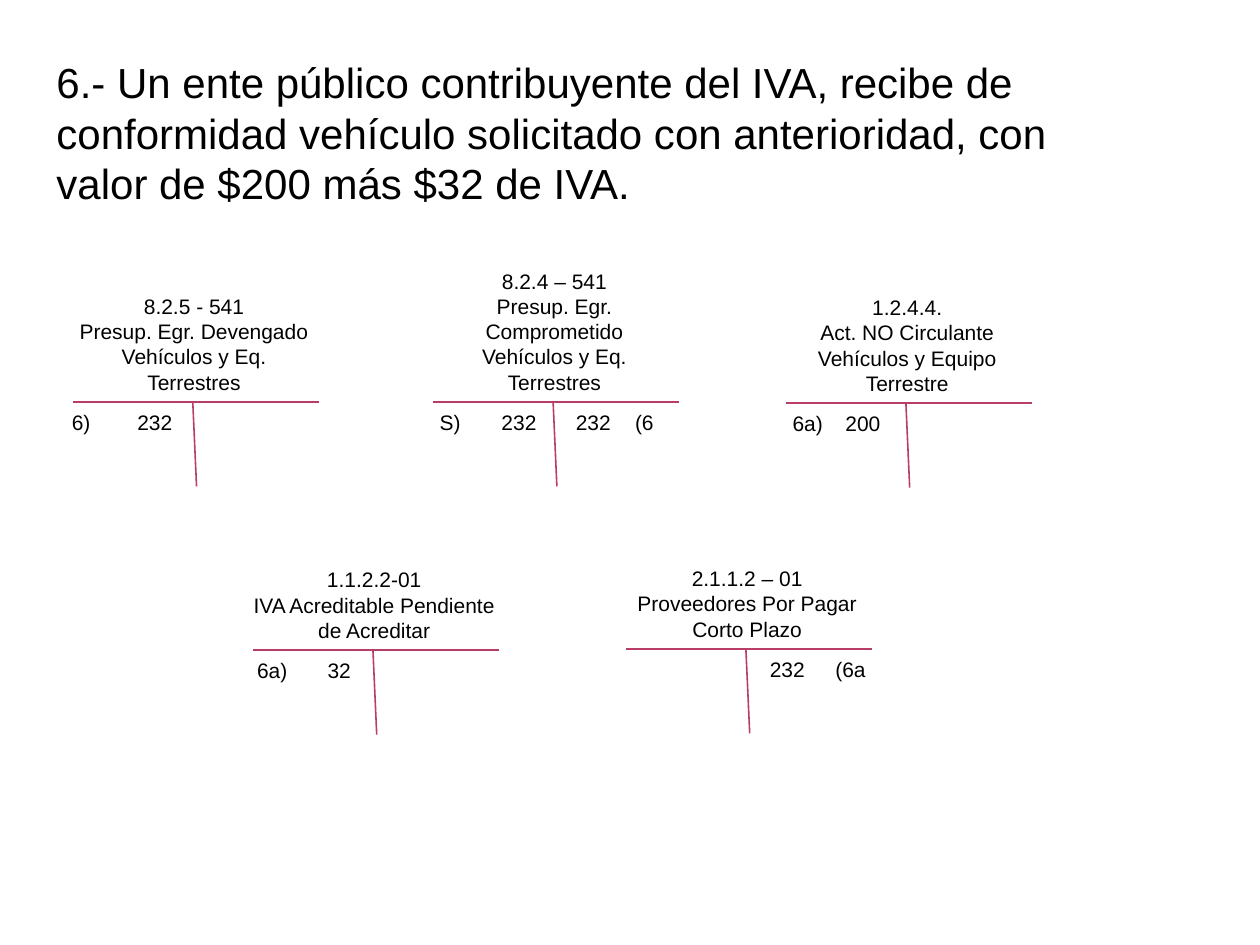
from dataclasses import dataclass

from lxml import etree
from pptx import Presentation
from pptx.dml.color import RGBColor
from pptx.enum.shapes import MSO_CONNECTOR
from pptx.enum.text import MSO_ANCHOR, PP_ALIGN
from pptx.oxml.ns import qn
from pptx.util import Inches, Pt

STRAIGHT = MSO_CONNECTOR.STRAIGHT
TOP, MIDDLE = MSO_ANCHOR.TOP, MSO_ANCHOR.MIDDLE
LEFT, CENTER = PP_ALIGN.LEFT, PP_ALIGN.CENTER

INK, RULE = "000000", "B83D68"
BAR_WIDTH, STEM_OFFSET, STEM_SLANT, STEM_HEIGHT = 1.95, 0.95, 0.03, 0.67
HEADING_WIDTH, HEADING_MARGIN, LINE_HEIGHT = 2.12, 0.1, 0.2
ENTRY_WIDTH, ENTRY_HEIGHT = 1.48, 0.5
DEBIT_INSET, CREDIT_INSET = 0.56, 0.16


@dataclass(frozen=True)
class Entry:
    left: float
    first: str
    second: str
    gap: float
    inset: float = DEBIT_INSET


@dataclass(frozen=True)
class Account:
    left: float
    top: float
    heading: tuple[str, ...]
    heading_lines: int
    entries: tuple[Entry, ...]


ACCOUNTS = (
    Account(0.58, 3.19, ("8.2.5 - 541", "Presup. Egr. Devengado", "Vehículos y Eq. Terrestres"), 4,
            (Entry(0.01, "6)", "232", 0.52),)),
    Account(3.44, 3.19, ("8.2.4 – 541", "Presup. Egr. Comprometido", "Vehículos y Eq. Terrestres"), 5,
            (Entry(2.93, "S)", "232", 0.49), Entry(4.41, "232", "(6", 0.47, CREDIT_INSET))),
    Account(6.24, 3.2, ("1.2.4.4.", "Act. NO Circulante", "Vehículos y Equipo Terrestre"), 4,
            (Entry(5.73, "6a)", "200", 0.42),)),
    Account(2.01, 5.16, ("1.1.2.2-01", "IVA Acreditable Pendiente de Acreditar"), 3,
            (Entry(1.48, "6a)", "32", 0.56),)),
    Account(4.97, 5.15, ("2.1.1.2 – 01", "Proveedores Por Pagar Corto Plazo"), 3,
            (Entry(5.95, "232", "(6a", 0.52, CREDIT_INSET),)),
)


def color(hex_value: str) -> RGBColor:
    return RGBColor.from_string(hex_value)


def add_text(slide, lines: tuple[str, ...], left: float, top: float, width: float,
             height: float, *, size: float = 12, align=LEFT, anchor=TOP,
             inset: float = 0.1, tab: float = 0) -> None:
    box = slide.shapes.add_textbox(Inches(left), Inches(top), Inches(width), Inches(height))
    frame = box.text_frame
    frame.word_wrap = True
    frame.vertical_anchor = anchor
    frame.margin_left = Inches(inset)
    for index, line in enumerate(lines):
        paragraph = frame.paragraphs[0] if index == 0 else frame.add_paragraph()
        paragraph.alignment = align
        if tab:
            stops = etree.SubElement(paragraph._p.get_or_add_pPr(), qn("a:tabLst"))
            etree.SubElement(stops, qn("a:tab"), pos=str(Inches(tab)), algn="l")
        run = paragraph.add_run()
        run.text = line
        run.font.size = Pt(size)
        run.font.name = "Arial"
        run.font.color.rgb = color(INK)


def add_rule(group, start: tuple[float, float], end: tuple[float, float]) -> None:
    rule = group.shapes.add_connector(STRAIGHT, *(Inches(value) for value in start + end))
    rule.line.color.rgb = color(RULE)
    rule.line.width = Pt(0.9)
    etree.SubElement(rule._element.spPr, qn("a:effectLst"))


def add_account(slide, account: Account) -> None:
    left, top = account.left, account.top
    stem = left + STEM_OFFSET
    cross = slide.shapes.add_group_shape()
    add_rule(cross, (left, top), (left + BAR_WIDTH, top))
    add_rule(cross, (stem, top), (stem + STEM_SLANT, top + STEM_HEIGHT))

    heading_height = account.heading_lines * LINE_HEIGHT + 0.11
    add_text(slide, account.heading, left - HEADING_MARGIN, top - heading_height,
             HEADING_WIDTH, heading_height, align=CENTER)
    for entry in account.entries:
        add_text(slide, (f"{entry.first}\t{entry.second}",), entry.left, top + 0.01,
                 ENTRY_WIDTH, ENTRY_HEIGHT, inset=entry.inset, tab=entry.gap)


def main() -> None:
    presentation = Presentation()
    presentation.slide_width, presentation.slide_height = Inches(10), Inches(7.5)
    slide = presentation.slides.add_slide(presentation.slide_layouts[6])
    statement = ("6.- Un ente público contribuyente del IVA, recibe de conformidad vehículo "
                 "solicitado con anterioridad, con valor de $200 más $32 de IVA.")
    add_text(slide, (statement,), 0.35, 0.39, 8.4, 1.32, size=24, anchor=MIDDLE)
    for account in ACCOUNTS:
        add_account(slide, account)
    presentation.save("out.pptx")


if __name__ == "__main__":
    main()
